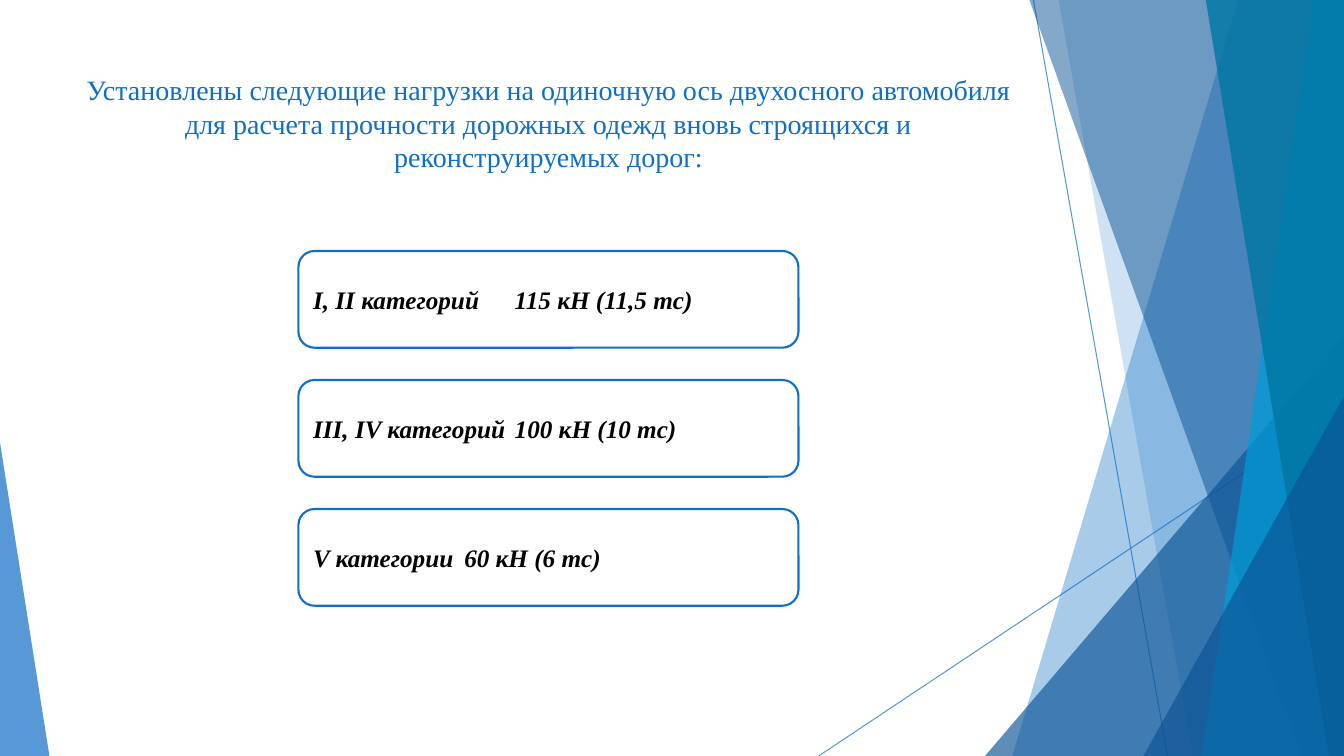
from dataclasses import dataclass

from lxml import etree
from pptx import Presentation
from pptx.dml.color import RGBColor
from pptx.enum import shapes, text
from pptx.oxml import ns
from pptx.util import Inches, Pt


@dataclass(frozen=True)
class Theme:
    font: str = "Times New Roman"
    blue: str = "0F6FC6"
    navy: str = "0B5394"
    cyan: str = "009DD9"
    teal: str = "0076A3"
    white: str = "FFFFFF"
    black: str = "000000"
    title_size: float = 20
    card_size: float = 18
    thin: float = 0.75
    border: float = 1.5


THEME = Theme()
WIDTH, HEIGHT = 13.33, 7.5


def paint(fill, color, opacity=100):
    fill.solid()
    fill.fore_color.rgb = RGBColor.from_string(color)
    if opacity < 100:
        color_node = fill._xPr.find(".//" + ns.qn("a:srgbClr"))
        etree.SubElement(color_node, ns.qn("a:alpha"), val=str(opacity * 1000))


def write(frame, words, size, color, align, bold=False, italic=False, tab=None):
    frame.word_wrap = True
    para = frame.paragraphs[0]
    para.alignment = align
    if tab:
        stops = etree.SubElement(para._p.get_or_add_pPr(), ns.qn("a:tabLst"))
        etree.SubElement(stops, ns.qn("a:tab"), pos=str(Inches(tab)), algn="l")
    span = para.add_run()
    span.text = words
    span.font.name = THEME.font
    span.font.size = Pt(size)
    span.font.bold = bold
    span.font.italic = italic
    span.font.color.rgb = RGBColor.from_string(color)


def add_ray(page, start, end):
    ray = page.shapes.add_connector(
        shapes.MSO_CONNECTOR.STRAIGHT, *map(Inches, start + end))
    ray.line.width = Pt(THEME.thin)
    paint(ray.line.fill, THEME.blue, 70)
    etree.SubElement(ray._element.spPr, ns.qn("a:effectLst"))


def add_band(page, top_x, bottom_x, right, top, bottom, color, opacity):
    corners = [(right, top), (right, bottom), (bottom_x, bottom)]
    builder = page.shapes.build_freeform(Inches(top_x), Inches(top), scale=1.0)
    builder.add_line_segments([(Inches(x), Inches(y)) for x, y in corners], close=True)
    band = builder.convert_to_shape()
    band.shadow.inherit = False
    paint(band.fill, color, opacity)
    band.line.fill.background()


def add_corner(page, left, top, width, height, apex, color, opacity):
    corner = page.shapes.add_shape(
        shapes.MSO_SHAPE.ISOSCELES_TRIANGLE, *map(Inches, (left, top, width, height)))
    corner.adjustments[0] = apex
    corner.shadow.inherit = False
    paint(corner.fill, color, opacity)
    corner.line.fill.background()


def add_facets(page, left, top, width, height):
    right, bottom = left + width, top + height

    def band(top_x, bottom_x, color, opacity):
        add_band(page, left + top_x, left + bottom_x, right, top, bottom, color, opacity)

    def right_corner(wide, tall):
        add_corner(page, right - wide, bottom - tall, wide, tall, 1, THEME.navy, 66)

    add_ray(page, (left + 2.13, top), (left + 3.46, bottom))
    add_ray(page, (right, top + 4.03), (left, bottom))
    band(4.16, 1.92, THEME.blue, 36)
    band(2.38, 3.71, THEME.blue, 20)
    right_corner(3.56, 4.17)
    band(2.09, 4.79, THEME.navy, 50)
    band(4.91, 3.8, THEME.cyan, 70)
    band(3.84, 5.06, THEME.teal, 80)
    right_corner(1.99, 3.57)


def add_title(page, left, top, width, height, words):
    box = page.shapes.add_textbox(*map(Inches, (left, top, width, height)))
    write(box.text_frame, words, THEME.title_size, THEME.blue, text.PP_ALIGN.CENTER)


def add_load_cards(page, left, top, width, height, loads):
    card_height = 0.96
    pitch = (height - card_height) / (len(loads) - 1)
    for index, (category, load, tab) in enumerate(loads):
        card = page.shapes.add_shape(
            shapes.MSO_SHAPE.ROUNDED_RECTANGLE,
            *map(Inches, (left, top + index * pitch, width, card_height)))
        card.shadow.inherit = False
        paint(card.fill, THEME.white)
        paint(card.line.fill, THEME.blue)
        card.line.width = Pt(THEME.border)
        card.text_frame.vertical_anchor = text.MSO_ANCHOR.MIDDLE
        write(card.text_frame, f"{category}\t{load}", THEME.card_size, THEME.black,
              text.PP_ALIGN.LEFT, bold=True, italic=True, tab=tab)


def main():
    deck = Presentation()
    deck.slide_width, deck.slide_height = Inches(WIDTH), Inches(HEIGHT)
    page = deck.slides.add_slide(deck.slide_layouts[6])
    paint(page.background.fill, THEME.white)
    add_facets(page, 8.12, 0, WIDTH - 8.12, HEIGHT)
    add_corner(page, 0, 4.39, 0.49, 3.11, 0, THEME.blue, 70)
    add_title(page, 0.74, 0.67, 9.4, 1.44,
              "Установлены следующие нагрузки на одиночную ось двухосного автомобиля "
              "для расчета прочности дорожных одежд вновь строящихся и "
              "реконструируемых дорог:")
    add_load_cards(page, 2.96, 2.49, 4.96, 3.52, [
        ("I, II категорий", "115 кН (11,5 тс)", 2),
        ("III, IV категорий", "100 кН (10 тс)", 2),
        ("V категории", "60 кН (6 тс)", 1.5),
    ])
    deck.save("out.pptx")


if __name__ == "__main__":
    main()
